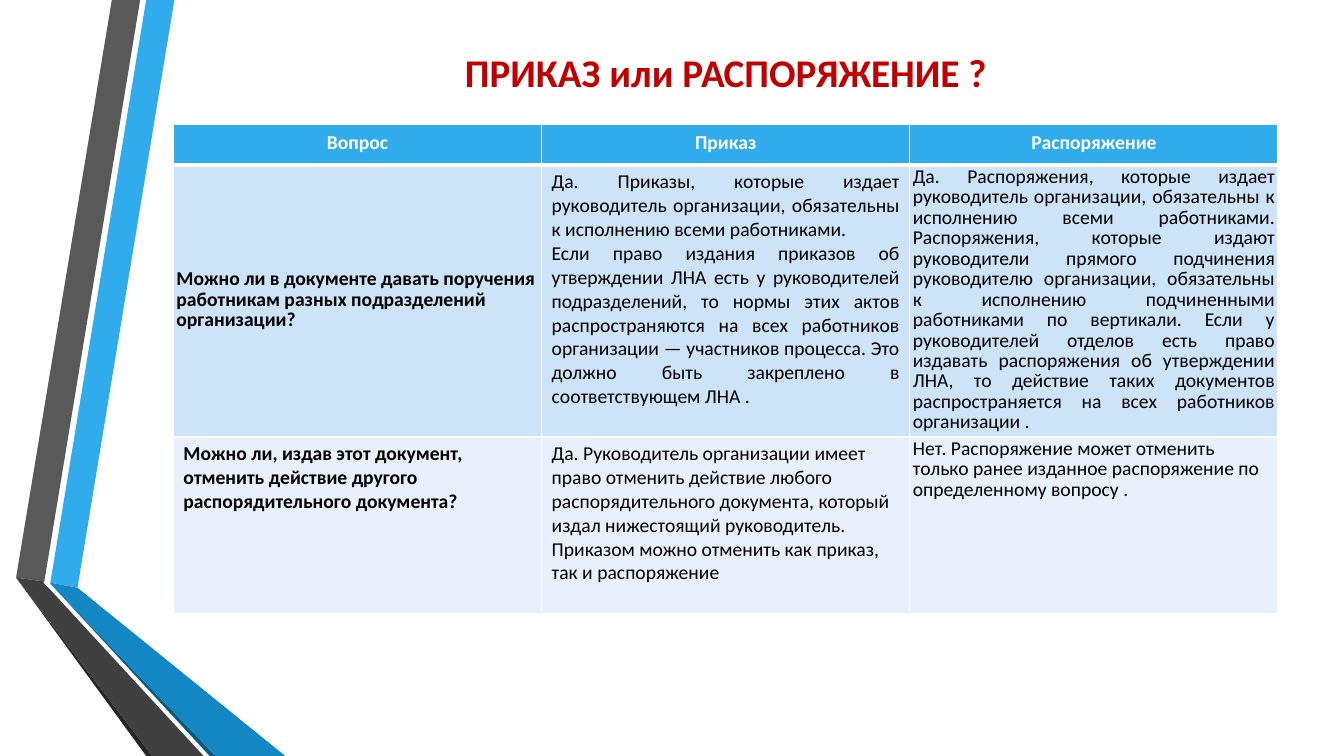
from pptx import Presentation
from pptx.dml.color import RGBColor
from pptx.enum.text import MSO_ANCHOR, PP_ALIGN
from pptx.oxml import parse_xml
from pptx.oxml.ns import nsdecls
from pptx.util import Pt

LEFT, CENTER, JUSTIFY = PP_ALIGN.LEFT, PP_ALIGN.CENTER, PP_ALIGN.JUSTIFY
TOP, MIDDLE = MSO_ANCHOR.TOP, MSO_ANCHOR.MIDDLE
FONT = "Calibri"

# Ribbon facets on a 204 x 540 pt area: colour, outline
RIBBON = [
    ("30ACEC", [(36, 416.2), (55.4, 419.8), (124.6, 0), (104.4, 0)]),
    ("595959", [(100.1, 0), (79.9, 0), (11.5, 412.6), (31.7, 415.4)]),
    ("262626", [(11.5, 412.6), (104.4, 540), (108.7, 540)]),
    ("0C5A82", [(36, 416.9), (149.8, 540), (154.1, 540)]),
    ("1287C3", [(36, 416.2), (36, 416.9), (154.1, 540), (203.8, 540), (55.4, 419.8)]),
    ("404040", [(145.4, 540), (34.6, 419.8), (31, 416.2), (31.7, 415.4),
                (11.5, 412.6), (108.7, 540)]),
]

ROW_HEIGHTS = [29.5, 193.7, 126.4]
ROW_FILLS = ["30ACEC", "CDE3F8", "E8F1FB"]

# Each cell: paragraphs, alignment, anchor, tight margins and leading
CELLS = [
    [(["Вопрос"], CENTER, MIDDLE, True),
     (["Приказ"], CENTER, MIDDLE, True),
     (["Распоряжение"], CENTER, MIDDLE, True)],
    [(["Можно ли в документе давать поручения работникам разных подразделений "
       "организации?"], LEFT, MIDDLE, True),
     (["Да. Приказы, которые издает руководитель организации, обязательны "
       "к исполнению всеми работниками. ",
       "Если право издания приказов об утверждении ЛНА есть у руководителей "
       "подразделений, то нормы этих актов распространяются на всех работников "
       "организации — участников процесса. Это должно быть закреплено в "
       "соответствующем ЛНА ."], JUSTIFY, TOP, False),
     (["Да. Распоряжения, которые издает руководитель организации, обязательны "
       "к исполнению всеми работниками. Распоряжения, которые издают руководители "
       "прямого подчинения руководителю организации, обязательны к исполнению "
       "подчиненными работниками по вертикали. Если у руководителей отделов есть "
       "право издавать распоряжения об утверждении ЛНА, то действие таких "
       "документов распространяется на всех работников организации ."],
      JUSTIFY, MIDDLE, True)],
    [(["Можно ли, издав этот документ, отменить действие другого "
       "распорядительного документа?"], LEFT, TOP, False),
     (["Да. Руководитель организации имеет право отменить действие любого "
       "распорядительного документа, который издал нижестоящий руководитель.",
       "Приказом можно отменить как приказ, так и распоряжение"], LEFT, TOP, False),
     (["Нет. Распоряжение может отменить только ранее изданное распоряжение "
       "по определенному вопросу ."], LEFT, TOP, True)],
]


def rgb(value):
    return RGBColor.from_string(value)


def style(p, size, color, bold, align):
    p.alignment = align
    p.font.name, p.font.size, p.font.bold = FONT, Pt(size), bold
    p.font.color.rgb = rgb(color)


def add_ribbon(s, x, y):
    group = s.shapes.add_group_shape()
    for color, outline in RIBBON:
        points = [(Pt(x + px), Pt(y + py)) for px, py in outline]
        builder = group.shapes.build_freeform(*points[0])
        builder.add_line_segments(points[1:])
        sp = builder.convert_to_shape()
        sp.shadow.inherit = False
        sp.fill.solid()
        sp.fill.fore_color.rgb = rgb(color)
        sp.line.fill.background()


def add_title(s, x, y, w, h):
    tf = s.shapes.add_textbox(Pt(x), Pt(y), Pt(w), Pt(h)).text_frame
    tf.word_wrap = True
    tf.vertical_anchor = MIDDLE
    p = tf.paragraphs[0]
    p.text = "ПРИКАЗ или РАСПОРЯЖЕНИЕ ?"
    style(p, 28, "C00000", True, CENTER)


def set_borders(cell, top, bottom):
    tc_pr = cell._tc.get_or_add_tcPr()
    for side, width in (("L", 1), ("R", 1), ("T", top), ("B", bottom)):
        tc_pr.append(parse_xml(
            f'<a:ln{side} {nsdecls("a")} w="{Pt(width)}"><a:solidFill>'
            f'<a:srgbClr val="FFFFFF"/></a:solidFill></a:ln{side}>'))


def fill_cell(cell, content, row, col):
    texts, align, anchor, tight = content
    header = row == 0
    set_borders(cell, 3 if row == 1 else 1, 3 if header else 1)
    cell.fill.solid()
    cell.fill.fore_color.rgb = rgb(ROW_FILLS[row])
    cell.vertical_anchor = anchor
    if tight:
        cell.margin_left = cell.margin_right = Pt(2.16)
        cell.margin_top = cell.margin_bottom = Pt(2.16)
    tf = cell.text_frame
    for i, text in enumerate(texts):
        p = tf.add_paragraph() if i else tf.paragraphs[0]
        p.text = text
        style(p, 14, "FFFFFF" if header else "000000", header or col == 0, align)
        if tight:
            p.line_spacing = Pt(14.6)


def add_comparison(s, x, y, w):
    table = s.shapes.add_table(len(CELLS), len(CELLS[0]), Pt(x), Pt(y), Pt(w),
                               Pt(sum(ROW_HEIGHTS))).table
    table.horz_banding = False
    for column in table.columns:
        column.width = Pt(w / len(CELLS[0]))
    for row, contents in enumerate(CELLS):
        table.rows[row].height = Pt(ROW_HEIGHTS[row])
        for col, content in enumerate(contents):
            fill_cell(table.cell(row, col), content, row, col)


def main():
    prs = Presentation()
    prs.slide_width, prs.slide_height = Pt(960), Pt(540)
    s = prs.slides.add_slide(prs.slide_layouts[6])
    left, width = 123.84, 789.12
    add_ribbon(s, 0, 0)
    add_comparison(s, left, 88.56, width)
    add_title(s, left, 13.68, width, 74.88)
    prs.save("out.pptx")


if __name__ == "__main__":
    main()
